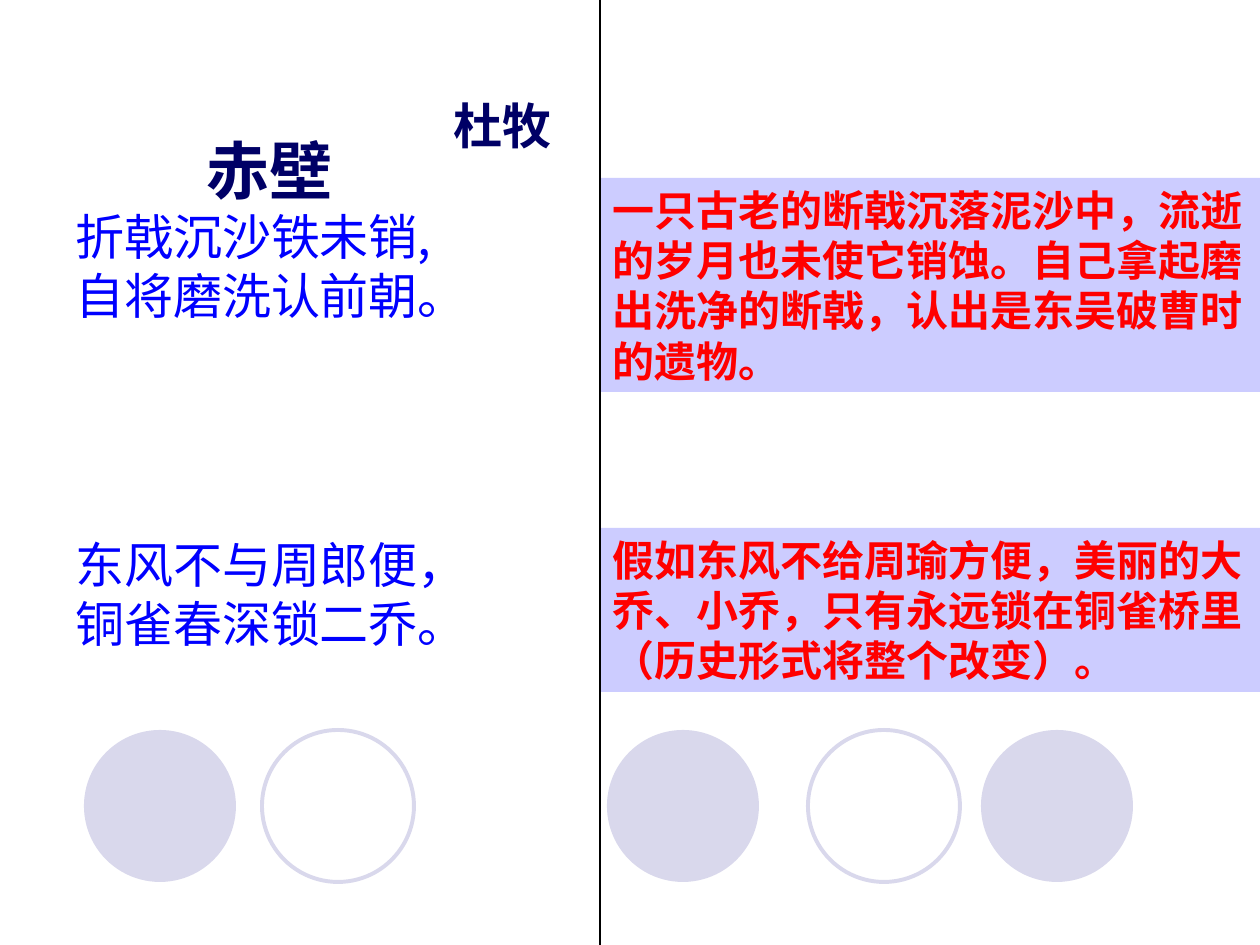
from lxml import etree
from pptx import Presentation
from pptx.dml.color import RGBColor
from pptx.enum.shapes import MSO_CONNECTOR, MSO_SHAPE
from pptx.enum.text import MSO_ANCHOR, PP_ALIGN
from pptx.oxml.ns import qn
from pptx.util import Inches, Pt

OVAL, RECT = MSO_SHAPE.OVAL, MSO_SHAPE.RECTANGLE
STRAIGHT = MSO_CONNECTOR.STRAIGHT
LEFT, TOP = PP_ALIGN.LEFT, MSO_ANCHOR.TOP

PX_PER_INCH = 126
WIDTH, HEIGHT = 1260, 945
DIVIDER_X = 600
COLORS = {
    "circle": "D9D8EC",
    "verse": "0000FF",
    "heading": "000066",
    "panel": "CCCCFF",
    "meaning": "FF0000",
    "divider": "000000",
}


def px(length):
    return Inches(length / PX_PER_INCH)


def rgb(name):
    return RGBColor.from_string(COLORS[name])


class PoemSlide:
    def __init__(self, presentation):
        self.shapes = presentation.slides.add_slide(presentation.slide_layouts[6]).shapes

    def set_text(self, frame, lines, size, font, color, bold):
        frame.text = "\n".join(lines)
        frame.vertical_anchor = TOP
        for paragraph in frame.paragraphs:
            paragraph.alignment = LEFT
            for run in paragraph.runs:
                run.font.size = Pt(size)
                run.font.name = font
                run.font.bold = bold
                run.font.color.rgb = rgb(color)

    def shape(self, kind, left, top, width, height, fill=None, line=None):
        shape = self.shapes.add_shape(kind, px(left), px(top), px(width), px(height))
        shape.shadow.inherit = False
        if fill:
            shape.fill.solid()
            shape.fill.fore_color.rgb = rgb(fill)
        else:
            shape.fill.background()
        if line:
            shape.line.color.rgb = rgb(line)
            shape.line.width = Pt(2.25)
        else:
            shape.line.fill.background()
        return shape

    def circle(self, left, filled):
        style = {"fill" if filled else "line": "circle"}
        self.shape(OVAL, left, 730, 152, 152, **style)

    def text(self, left, top, width, height, lines, size, font, color, bold=False):
        box = self.shapes.add_textbox(px(left), px(top), px(width), px(height))
        box.text_frame.word_wrap = False
        self.set_text(box.text_frame, lines, size, font, color, bold)

    def panel(self, top, height, meaning):
        panel = self.shape(RECT, DIVIDER_X, top, WIDTH - DIVIDER_X, height, fill="panel")
        panel.text_frame.word_wrap = True
        self.set_text(panel.text_frame, [meaning], 24, "Times New Roman", "meaning", True)

    def divider(self):
        line = self.shapes.add_connector(STRAIGHT, px(DIVIDER_X), 0, px(DIVIDER_X), px(HEIGHT))
        line.line.color.rgb = rgb("divider")
        line.line.width = Pt(0.75)
        etree.SubElement(line._element.spPr, qn("a:effectLst"))


def main():
    presentation = Presentation()
    presentation.slide_width, presentation.slide_height = px(WIDTH), px(HEIGHT)
    slide = PoemSlide(presentation)

    for left in (607, 981, 84):
        slide.circle(left, filled=True)
    for left in (808, 262):
        slide.circle(left, filled=False)

    couplets = [
        (200, 442, ["折戟沉沙铁未销,", "自将磨洗认前朝。"]),
        (528, 417, ["东风不与周郎便，", "铜雀春深锁二乔。"]),
    ]
    for top, width, verses in couplets:
        slide.text(63, top, width, 131, verses, 28, "Noto Sans CJK SC", "verse")

    slide.text(194, 125, 170, 88, ["赤壁"], 36, "Roboto", "heading", bold=True)
    slide.text(441, 89, 139, 72, ["杜牧"], 28, "Roboto", "heading", bold=True)

    slide.panel(178, 214, "一只古老的断戟沉落泥沙中，流逝的岁月也未使它销蚀。"
                          "自己拿起磨出洗净的断戟，认出是东吴破曹时的遗物。")
    slide.panel(528, 164, "假如东风不给周瑜方便，美丽的大乔、小乔，"
                          "只有永远锁在铜雀桥里（历史形式将整个改变）。")
    slide.divider()

    presentation.save("out.pptx")


if __name__ == "__main__":
    main()
